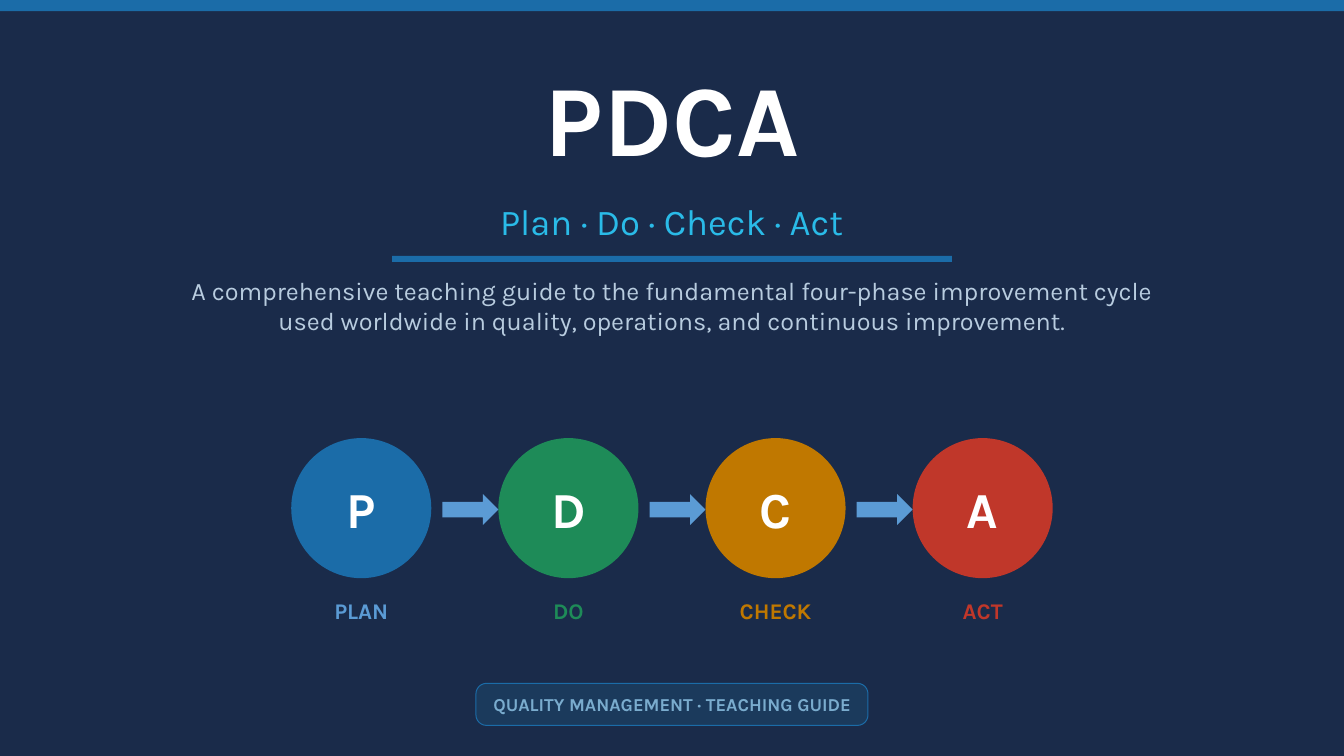
from pptx import Presentation
from pptx.dml.color import RGBColor
from pptx.enum.shapes import MSO_SHAPE as Shape
from pptx.enum.text import MSO_ANCHOR as Anchor, MSO_AUTO_SIZE as AutoSize, PP_ALIGN as Align
from pptx.util import Cm, Pt

NAVY = RGBColor(0x1A, 0x2B, 0x4A)
BLUE = RGBColor(0x1B, 0x6C, 0xA8)
CYAN = RGBColor(0x2A, 0xBB, 0xE8)
SKY = RGBColor(0x5B, 0x9B, 0xD5)
GREEN = RGBColor(0x1E, 0x8B, 0x58)
AMBER = RGBColor(0xC0, 0x78, 0x00)
RED = RGBColor(0xC0, 0x37, 0x2A)
MIST = RGBColor(0xB8, 0xCC, 0xDF)
STEEL = RGBColor(0x1B, 0x3A, 0x5C)
HAZE = RGBColor(0x7A, 0xAC, 0xCE)
WHITE = RGBColor(0xFF, 0xFF, 0xFF)
FONT = "Karla"

TITLE = "PDCA"
SUBTITLE = "Plan · Do · Check · Act"
DESCRIPTION = [
    "A comprehensive teaching guide to the fundamental four-phase improvement cycle",
    "used worldwide in quality, operations, and continuous improvement.",
]
PHASES = [
    ("P", "PLAN", BLUE, SKY),
    ("D", "DO", GREEN, GREEN),
    ("C", "CHECK", AMBER, AMBER),
    ("A", "ACT", RED, RED),
]
BADGE = "QUALITY MANAGEMENT · TEACHING GUIDE"

SLIDE_WIDTH, SLIDE_HEIGHT = 33.87, 19.05
TEXT_LEFT, TEXT_WIDTH = 2.12, 29.63
CIRCLE, PITCH, CIRCLE_TOP = 3.53, 5.22, 11.04
ARROW_WIDTH, ARROW_HEIGHT, ARROW_TOP = 1.41, 0.78, 12.45
LABEL_TOP, LABEL_HEIGHT = 14.88, 0.99


def centred(width):
    return (SLIDE_WIDTH - width) / 2


def place(box, left, top, width, height):
    box.left, box.top, box.width, box.height = Cm(left), Cm(top), Cm(width), Cm(height)


def write(box, lines, size, color, bold=False, anchor=Anchor.MIDDLE, margin=None):
    frame = box.text_frame
    frame.word_wrap = True
    frame.auto_size = AutoSize.NONE
    frame.vertical_anchor = anchor
    if margin is not None:
        frame.margin_left = frame.margin_right = Cm(margin)
        frame.margin_top = frame.margin_bottom = 0
    for index, line in enumerate(lines):
        para = frame.add_paragraph() if index else frame.paragraphs[0]
        para.alignment = Align.CENTER
        para.space_before = Pt(0)
        span = para.add_run()
        span.text = line
        span.font.name = FONT
        span.font.size = Pt(size)
        span.font.bold = bold
        span.font.color.rgb = color


def add_block(page, kind, left, top, width, height, fill):
    block = page.shapes.add_shape(kind, Cm(left), Cm(top), Cm(width), Cm(height))
    block.shadow.inherit = False
    block.fill.solid()
    block.fill.fore_color.rgb = fill
    block.line.fill.background()
    return block


def add_text(page, left, top, width, height):
    return page.shapes.add_textbox(Cm(left), Cm(top), Cm(width), Cm(height))


def add_heading(page):
    add_block(page, Shape.RECTANGLE, 0, 0, SLIDE_WIDTH, 0.28, BLUE)
    title, subtitle = page.placeholders
    place(title, TEXT_LEFT, 1.24, TEXT_WIDTH, 3.35)
    write(title, [TITLE], 72, WHITE, bold=True)
    place(subtitle, TEXT_LEFT, 4.88, TEXT_WIDTH, 1.35)
    write(subtitle, [SUBTITLE], 26, CYAN)
    add_block(page, Shape.RECTANGLE, centred(14.11), 6.45, 14.11, 0.15, BLUE)
    description = add_text(page, TEXT_LEFT, 6.81, TEXT_WIDTH, 2.29)
    write(description, DESCRIPTION, 18, MIST, anchor=Anchor.TOP)


def add_cycle(page):
    first_left = centred(PITCH * (len(PHASES) - 1) + CIRCLE)
    for index, (letter, name, fill, label_color) in enumerate(PHASES):
        left = first_left + index * PITCH
        circle = add_block(page, Shape.OVAL, left, CIRCLE_TOP, CIRCLE, CIRCLE, fill)
        write(circle, [letter], 36, WHITE, bold=True, margin=0)
        label = add_text(page, left, LABEL_TOP, CIRCLE, LABEL_HEIGHT)
        write(label, [name], 16, label_color, bold=True, margin=0)
        if index:
            add_block(page, Shape.RIGHT_ARROW, left - ARROW_WIDTH, ARROW_TOP,
                      ARROW_WIDTH, ARROW_HEIGHT, SKY)


def add_badge(page):
    badge = add_block(page, Shape.ROUNDED_RECTANGLE, centred(9.88), 17.22, 9.88, 1.06, STEEL)
    badge.adjustments[0] = 0.25
    badge.line.color.rgb = BLUE
    badge.line.width = Pt(0.72)
    write(badge, [BADGE], 13, HAZE, bold=True, margin=0.25)


def main():
    deck = Presentation()
    deck.slide_width, deck.slide_height = Cm(SLIDE_WIDTH), Cm(SLIDE_HEIGHT)
    page = deck.slides.add_slide(deck.slide_layouts[0])
    page.background.fill.solid()
    page.background.fill.fore_color.rgb = NAVY
    add_heading(page)
    add_cycle(page)
    add_badge(page)
    deck.save("out.pptx")


if __name__ == "__main__":
    main()
